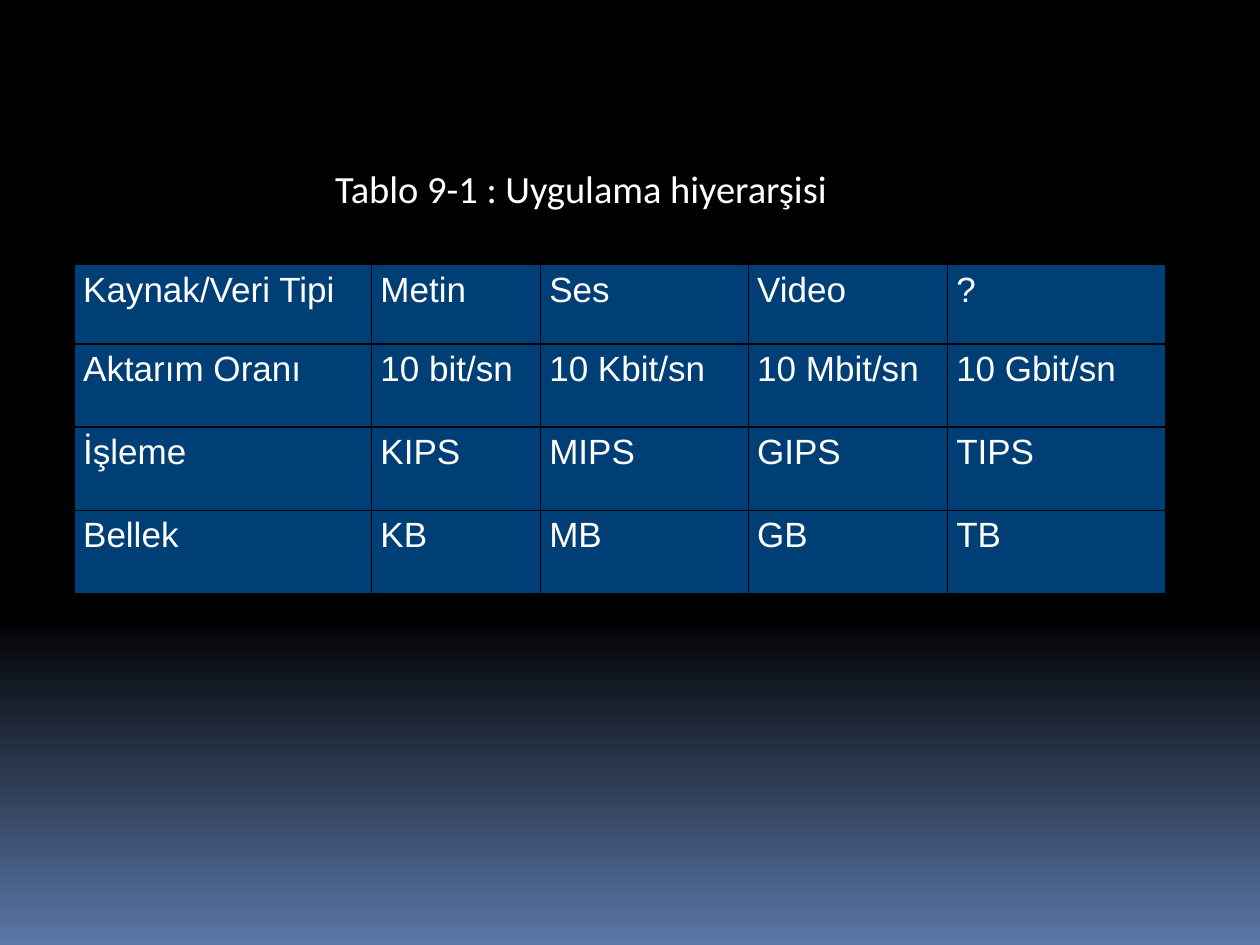
from lxml import etree
from pptx import Presentation
from pptx.dml.color import RGBColor
from pptx.enum import text
from pptx.oxml import ns
from pptx.util import Inches, Pt

HUES = {"black": "000000", "glow": "5B77A8", "cell": "003F75", "text": "FFFFFF"}
ROWS = [
    ["Kaynak/Veri Tipi", "Metin", "Ses", "Video", "?"],
    ["Aktarım Oranı", "10 bit/sn", "10 Kbit/sn", "10 Mbit/sn", "10 Gbit/sn"],
    ["İşleme", "KIPS", "MIPS", "GIPS", "TIPS"],
    ["Bellek", "KB", "MB", "GB", "TB"],
]
WIDTHS = [2.36, 1.34, 1.65, 1.58, 1.73]
HEIGHTS = [0.63, 0.66, 0.66, 0.66]


def hue(name):
    return RGBColor.from_string(HUES[name])


def assign(item, values):
    for key, value in values.items():
        setattr(item, key, value)


def style(font, face, size):
    assign(font, {"name": face, "size": Pt(size), "bold": False})
    font.color.rgb = hue("text")


def add_back(slide):
    fill = slide.background.fill
    fill.gradient()
    fill.gradient_angle = 270
    for stop, (place, name) in zip(fill.gradient_stops, [(0.65, "black"), (1, "glow")]):
        stop.position = place
        stop.color.rgb = hue(name)


def add_title(slide, left, top, width, height):
    title = slide.shapes.title
    assign(title, {"left": Inches(left), "top": Inches(top),
                   "width": Inches(width), "height": Inches(height)})
    frame = title.text_frame
    frame.text = "Tablo 9-1 : Uygulama hiyerarşisi"
    assign(frame, {"word_wrap": True, "auto_size": text.MSO_AUTO_SIZE.NONE,
                   "vertical_anchor": text.MSO_ANCHOR.TOP, "margin_top": Inches(0.08)})
    line = frame.paragraphs[0]
    line.alignment = text.PP_ALIGN.LEFT
    style(line.runs[0].font, "Calibri", 22)


def add_edges(cell):
    props = cell._tc.get_or_add_tcPr()
    for spot, side in enumerate("LRTB"):
        edge = etree.Element(ns.qn(f"a:ln{side}"), w=str(Pt(1)))
        fill = etree.SubElement(edge, ns.qn("a:solidFill"))
        etree.SubElement(fill, ns.qn("a:srgbClr"), val=HUES["black"])
        props.insert(spot, edge)


def fill_cell(cell, words):
    cell.text = words
    assign(cell, {"margin_left": Inches(0.07), "margin_right": Inches(0.07),
                  "margin_top": 0, "margin_bottom": 0})
    cell.fill.solid()
    cell.fill.fore_color.rgb = hue("cell")
    add_edges(cell)
    line = cell.text_frame.paragraphs[0]
    assign(line, {"alignment": text.PP_ALIGN.JUSTIFY, "line_spacing": 1.15})
    style(line.runs[0].font, "Arial", 20)


def add_grid(slide, left, top, width, height):
    grid = slide.shapes.add_table(len(ROWS), len(WIDTHS), Inches(left), Inches(top),
                                  Inches(width), Inches(height)).table
    assign(grid, {"first_row": False, "horz_banding": False})
    for col, size in zip(grid.columns, WIDTHS):
        col.width = Inches(size)
    for row, size, words in zip(grid.rows, HEIGHTS, ROWS):
        row.height = Inches(size)
        for cell, word in zip(row.cells, words):
            fill_cell(cell, word)


def main():
    deck = Presentation()
    assign(deck, {"slide_width": Inches(10), "slide_height": Inches(7.5)})
    slide = deck.slides.add_slide(deck.slide_layouts[5])
    # Background fading from black to blue
    add_back(slide)
    # Table caption as title
    add_title(slide, 2.56, 1.23, 4.15, 0.81)
    # Application hierarchy
    add_grid(slide, 0.59, 2.1, sum(WIDTHS), sum(HEIGHTS))
    deck.save("out.pptx")


if __name__ == "__main__":
    main()
